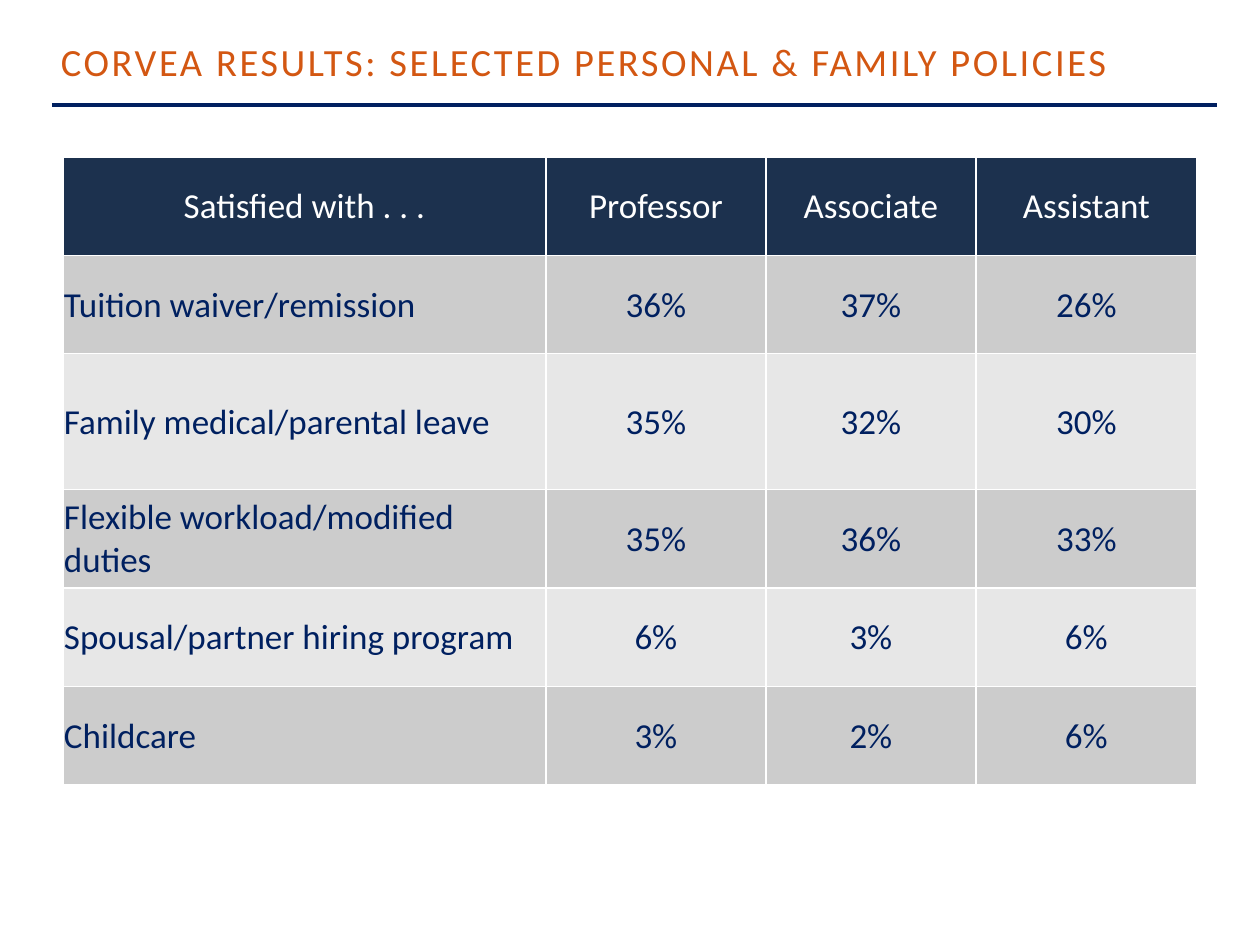
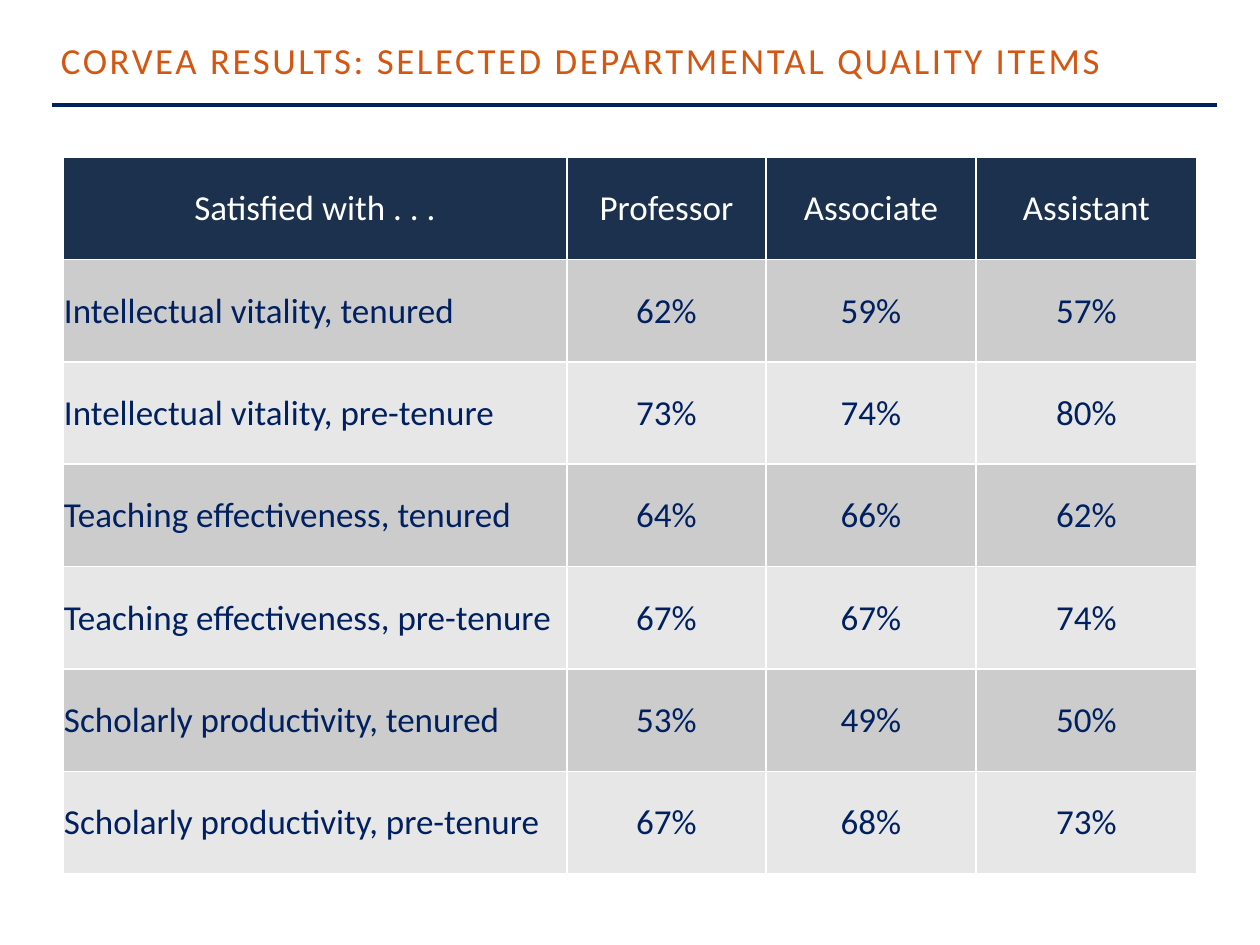
from pptx import Presentation
from pptx import util as u
from pptx.dml.color import RGBColor
from pptx.enum import shapes, text
from pptx.oxml.ns import qn
from lxml import etree

EMU_PER_PX = 914400 / 126
FONT = "Calibri"
WHITE = RGBColor(0xFF, 0xFF, 0xFF)
ORANGE = RGBColor(0xD3, 0x57, 0x12)
NAVY = RGBColor(0x00, 0x20, 0x60)
HEADER_BLUE = RGBColor(0x1C, 0x31, 0x4E)
ROW_GREYS = (RGBColor(0xCC, 0xCC, 0xCC), RGBColor(0xE7, 0xE7, 0xE7))

SURVEY = "CORVEA"
HEADINGS = ("Satisfied with . . .", "Professor", "Associate", "Assistant")
FAMILY_POLICIES = (
    ("Tuition waiver/remission", 36, 37, 26),
    ("Family medical/parental leave", 35, 32, 30),
    ("Flexible workload/modified duties", 35, 36, 33),
    ("Spousal/partner hiring program", 6, 3, 6),
    ("Childcare", 3, 2, 6),
)
DEPARTMENT_QUALITY = (
    ("Intellectual vitality, tenured", 62, 59, 57),
    ("Intellectual vitality, pre-tenure", 73, 74, 80),
    ("Teaching effectiveness, tenured", 64, 66, 62),
    ("Teaching effectiveness, pre-tenure", 67, 67, 74),
    ("Scholarly productivity, tenured", 53, 49, 50),
    ("Scholarly productivity, pre-tenure", 67, 68, 73),
)


def px(length):
    return u.Emu(round(length * EMU_PER_PX))


def style_run(run, size, color):
    run.font.name = FONT
    run.font.size = u.Pt(size)
    run.font.bold = False
    run.font.color.rgb = color


def add_title(slide, topic, size):
    title = slide.shapes.add_textbox(px(42), px(32), px(1197), px(892))
    frame = title.text_frame
    frame.word_wrap = True
    frame.margin_left = px(19)
    frame.margin_top = px(6)
    frame.text = f"{SURVEY} RESULTS: {topic}"
    run = frame.paragraphs[0].runs[0]
    style_run(run, size, ORANGE)
    run.font._element.set("spc", "150")


def add_title_rule(slide):
    rule = slide.shapes.add_connector(
        shapes.MSO_CONNECTOR.STRAIGHT, px(52), px(105), px(1217), px(105))
    rule.line.color.rgb = NAVY
    rule.line.width = u.Pt(2)
    etree.SubElement(rule._element.spPr, qn("a:effectLst"))


def set_borders(cell):
    properties = cell._tc.get_or_add_tcPr()
    for edge in "LRTB":
        border = etree.SubElement(properties, qn(f"a:ln{edge}"), w=str(u.Pt(1)))
        fill = etree.SubElement(border, qn("a:solidFill"))
        etree.SubElement(fill, qn("a:srgbClr"), val=str(WHITE))


def fill_cell(cell, wording, fill, color, centred=True):
    set_borders(cell)
    cell.fill.solid()
    cell.fill.fore_color.rgb = fill
    cell.margin_left = cell.margin_right = cell.margin_top = px(1)
    cell.margin_bottom = 0
    cell.vertical_anchor = text.MSO_ANCHOR.MIDDLE
    cell.text_frame.text = wording
    paragraph = cell.text_frame.paragraphs[0]
    paragraph.alignment = text.PP_ALIGN.CENTER if centred else text.PP_ALIGN.LEFT
    style_run(paragraph.runs[0], 20, color)


def add_satisfaction_table(slide, ratings, widths, height, tall_rows):
    row_count = len(ratings) + 1
    regular = (height - sum(tall_rows.values())) / (row_count - len(tall_rows))
    table = slide.shapes.add_table(
        row_count, len(HEADINGS), px(63), px(157), px(sum(widths)), px(height)).table
    table.horz_banding = False
    for column, width in zip(table.columns, widths):
        column.width = px(width)
    for index, row in enumerate(table.rows):
        row.height = px(tall_rows.get(index, regular))
    for index, heading in enumerate(HEADINGS):
        fill_cell(table.cell(0, index), heading, HEADER_BLUE, WHITE)
    for row, (item, *shares) in enumerate(ratings, 1):
        grey = ROW_GREYS[(row - 1) % 2]
        fill_cell(table.cell(row, 0), item, grey, NAVY, centred=False)
        for column, share in enumerate(shares, 1):
            fill_cell(table.cell(row, column), f"{share}%", grey, NAVY)


def add_results_slide(deck, topic, title_size, ratings, widths, height, tall_rows):
    slide = deck.slides.add_slide(deck.slide_layouts[6])
    slide.background.fill.solid()
    slide.background.fill.fore_color.rgb = WHITE
    add_title_rule(slide)
    add_title(slide, topic, title_size)
    add_satisfaction_table(slide, ratings, widths, height, tall_rows)


def main():
    deck = Presentation()
    deck.slide_width, deck.slide_height = px(1260), px(945)
    add_results_slide(
        deck, "SELECTED PERSONAL & FAMILY POLICIES", 22,
        FAMILY_POLICIES, (483, 220, 210, 221), 628, {2: 136})
    add_results_slide(
        deck, "SELECTED DEPARTMENTAL QUALITY ITEMS", 21,
        DEPARTMENT_QUALITY, (504, 199, 210, 221), 717, {})
    deck.save("out.pptx")


if __name__ == "__main__":
    main()
